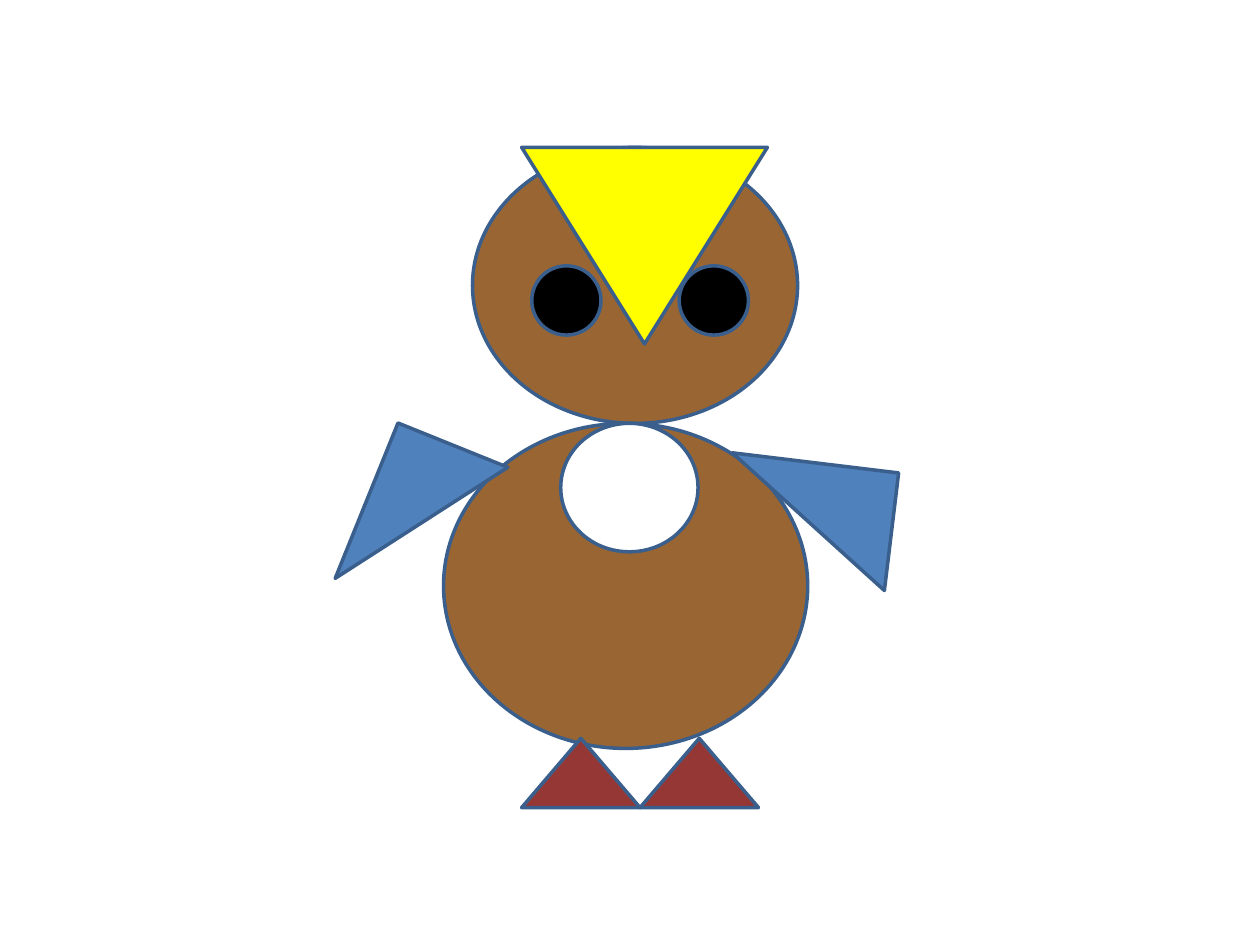
from pptx import Presentation
from pptx import util as u
from pptx.dml.color import RGBColor
from pptx.enum import shapes

THEME = {
    "brown": "996633", "white": "FFFFFF", "black": "000000",
    "yellow": "FFFF00", "blue": "4F81BD", "red": "953735",
    "edge": "3A5F8C", "weight": 2,
}
KIND = shapes.MSO_SHAPE

HEAD = [(3.75, 1.17, 2.58, 2.19)]
BODY = [(3.52, 3.36, 2.89, 2.58)]
CHEST = [(4.45, 3.36, 1.09, 1.02)]
EYES = [(x, 2.11, 0.55, 0.55) for x in (4.22, 5.39)]
BEAK = [(4.14, 1.17, 1.95, 1.56)]
WINGS = [(5.75, 3.67, 1.33, 0.94, 186.9), (2.68, 3.68, 1.33, 0.94, 112)]
FEET = [(4.14 + i * 0.94, 5.86, 0.94, 0.55) for i in range(2)]

PARTS = [
    (KIND.OVAL, "brown", HEAD + BODY),
    (KIND.OVAL, "white", CHEST),
    (KIND.OVAL, "black", EYES),
    (KIND.FLOWCHART_MERGE, "yellow", BEAK),
    (KIND.RIGHT_TRIANGLE, "blue", WINGS),
    (KIND.ISOSCELES_TRIANGLE, "red", FEET),
]


def tint(name):
    return RGBColor.from_string(THEME[name])


def draw(slide, kind, fill, box, turn=0):
    part = slide.shapes.add_shape(kind, *(u.Inches(n) for n in box))
    part.rotation = turn
    part.shadow.inherit = False
    part.fill.solid()
    part.fill.fore_color.rgb = tint(fill)
    part.line.color.rgb = tint("edge")
    part.line.width = u.Pt(THEME["weight"])


def main():
    deck = Presentation()
    deck.slide_width, deck.slide_height = u.Inches(10), u.Inches(7.5)
    slide = deck.slides.add_slide(deck.slide_layouts[6])
    for kind, fill, spots in PARTS:
        for spot in spots:
            draw(slide, kind, fill, spot[:4], *spot[4:])
    deck.save("out.pptx")


if __name__ == "__main__":
    main()
